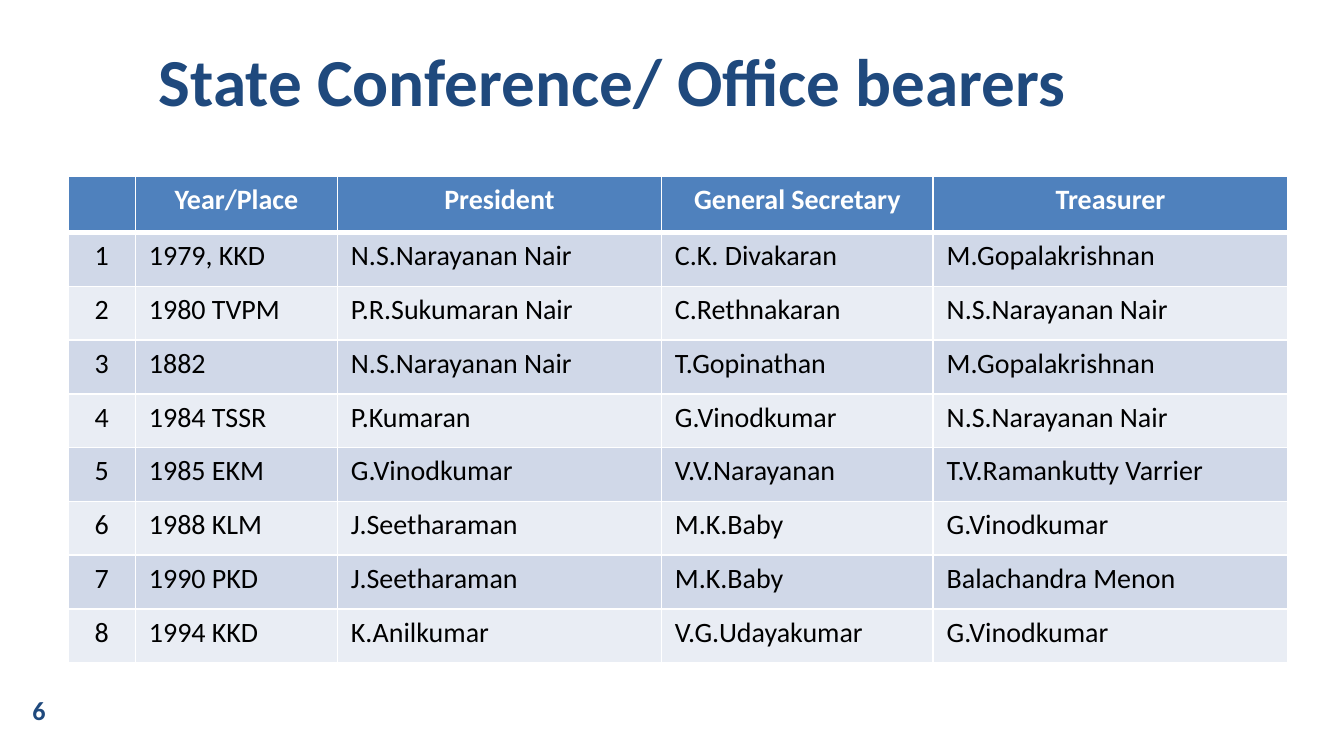
from pptx import Presentation
from pptx.util import Pt
from pptx.dml.color import RGBColor as RGB
from pptx.enum.text import PP_ALIGN as Align, MSO_ANCHOR as Anchor
from lxml.etree import fromstring

NS = "http://schemas.openxmlformats.org/drawingml/2006/main"
COLORS = {"navy": "1F497D", "head": "4F81BD", "odd": "D0D8E8",
          "even": "E9EDF4", "white": "FFFFFF", "black": "000000"}
ROWS = [
    ["", "Year/Place", "President", "General Secretary", "Treasurer"],
    ["1", "1979, KKD", "N.S.Narayanan Nair", "C.K. Divakaran", "M.Gopalakrishnan"],
    ["2", "1980 TVPM", "P.R.Sukumaran Nair", "C.Rethnakaran", "N.S.Narayanan Nair"],
    ["3", "1882", "N.S.Narayanan Nair", "T.Gopinathan", "M.Gopalakrishnan"],
    ["4", "1984 TSSR", "P.Kumaran", "G.Vinodkumar", "N.S.Narayanan Nair"],
    ["5", "1985 EKM", "G.Vinodkumar", "V.V.Narayanan", "T.V.Ramankutty Varrier"],
    ["6", "1988 KLM", "J.Seetharaman", "M.K.Baby", "G.Vinodkumar"],
    ["7", "1990 PKD", "J.Seetharaman", "M.K.Baby", "Balachandra Menon"],
    ["8", "1994 KKD", "K.Anilkumar", "V.G.Udayakumar", "G.Vinodkumar"],
]
WIDTHS = [36.3, 108.2, 173.6, 145.6, 190]


def write(frame, text, size, color, bold, align):
    frame.text = text
    para = frame.paragraphs[0]
    para.alignment = align
    form = {"name": "Calibri", "size": Pt(size), "bold": bold}
    for key, value in form.items():
        setattr(para.font, key, value)
    para.font.color.rgb = RGB.from_string(COLORS[color])


def border(cell, side, width):
    props = cell._tc.get_or_add_tcPr()
    props.append(fromstring(
        f'<a:ln{side} xmlns:a="{NS}" w="{Pt(width)}"><a:solidFill>'
        f'<a:srgbClr val="{COLORS["white"]}"/></a:solidFill></a:ln{side}>'))


deck = Presentation()
deck.slide_width, deck.slide_height = Pt(720), Pt(405)
slide = deck.slides.add_slide(deck.slide_layouts[5])

title = slide.shapes.title
place = {"left": 77.8, "top": 13.7, "width": 642.2, "height": 58.3}
for key, value in place.items():
    setattr(title, key, Pt(value))
title.text_frame.vertical_anchor = Anchor.MIDDLE
write(title.text_frame, "State Conference/ Office bearers", 36, "navy", True, Align.LEFT)

number = slide.shapes.add_textbox(Pt(0), Pt(369.4), Pt(41.8), Pt(22.3))
number.text_frame.word_wrap = True
number.text_frame.vertical_anchor = Anchor.MIDDLE
write(number.text_frame, "6", 14, "navy", True, Align.CENTER)

table = slide.shapes.add_table(len(ROWS), len(WIDTHS), Pt(36.3), Pt(94.6),
                               Pt(sum(WIDTHS)), Pt(260.4)).table
for col, width in zip(table.columns, WIDTHS):
    col.width = Pt(width)

for r, names in enumerate(ROWS):
    table.rows[r].height = Pt(28.8 if r else 30)
    tone = "head" if r == 0 else "odd" if r % 2 else "even"
    for c, name in enumerate(names):
        cell = table.cell(r, c)
        align = Align.CENTER if r == 0 or c == 0 else Align.LEFT
        write(cell.text_frame, name, 15, "black" if r else "white", r == 0, align)
        sides = {"L": 1, "R": 1, "T": 3 if r == 1 else 1, "B": 1 if r else 3}
        for side, width in sides.items():
            border(cell, side, width)
        cell.fill.solid()
        cell.fill.fore_color.rgb = RGB.from_string(COLORS[tone])

deck.save("out.pptx")
